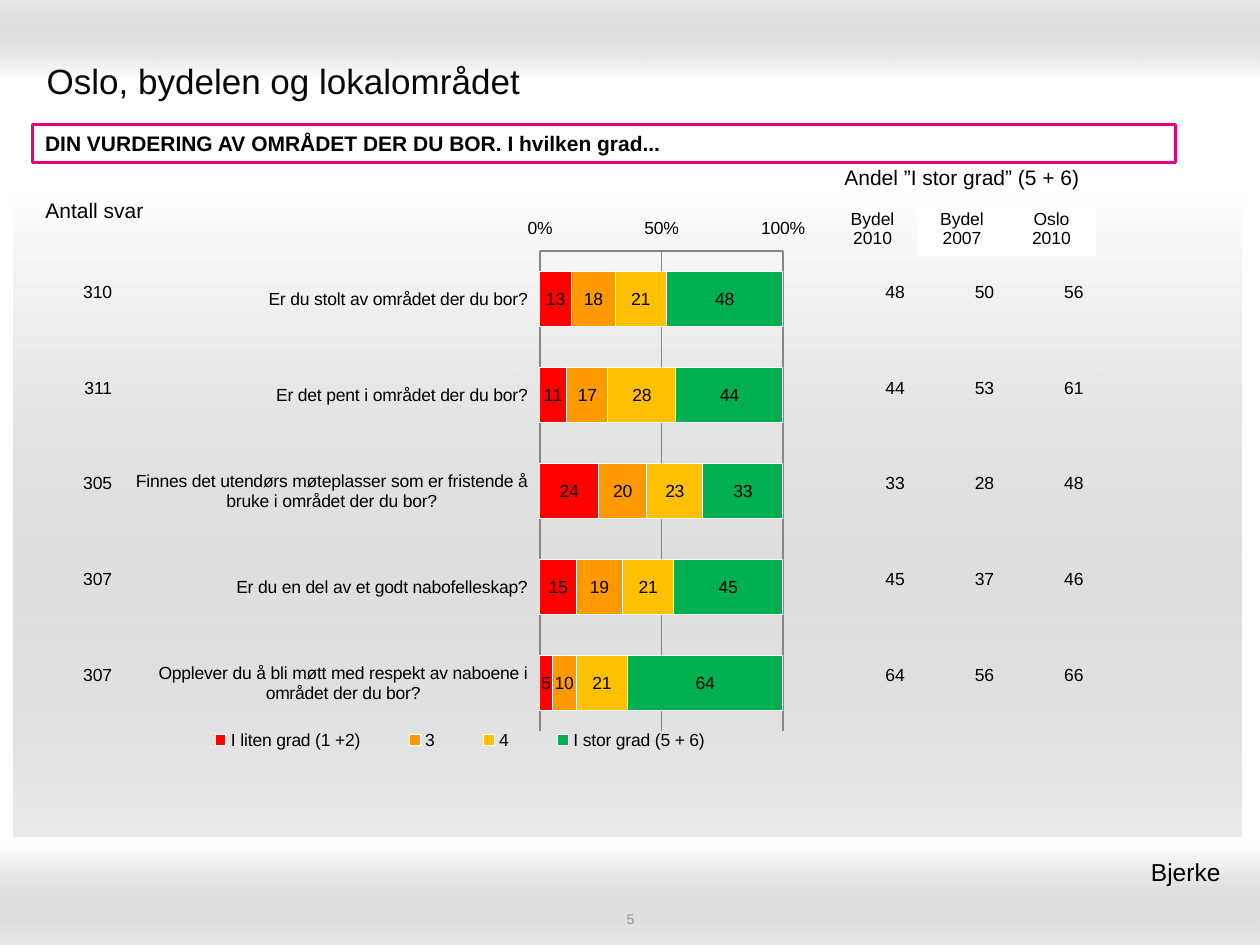
from dataclasses import dataclass

from lxml import etree
from pptx import Presentation
from pptx import util as u
from pptx.chart import data
from pptx.dml import color
from pptx.enum import chart, shapes, text
from pptx.oxml import ns

LEFT, MID, RIGHT = text.PP_ALIGN.LEFT, text.PP_ALIGN.CENTER, text.PP_ALIGN.RIGHT
PLAIN = "{2D5ABB26-0587-4C30-8999-92F81FD0307C}"


@dataclass(frozen=True)
class Theme:
    font: str = "Arial"
    white: str = "FFFFFF"
    black: str = "000000"
    ink: str = "080808"
    shade: str = "999999"
    pale: str = "969696"
    grid: str = "868686"
    pink: str = "E7007E"
    scale: tuple = ("FF0000", "FF9900", "FFC000", "00B050")
    title: int = 20
    place: int = 14
    head: int = 12
    base: int = 10
    foot: int = 8


def rgb(tone):
    return color.RGBColor.from_string(tone)


def write(frame, words, size, tone=Theme.black, bold=False, align=LEFT):
    frame.word_wrap = True
    frame.vertical_anchor = text.MSO_ANCHOR.MIDDLE
    for at, line in enumerate(words.split("\n")):
        para = frame.paragraphs[0] if at == 0 else frame.add_paragraph()
        para.alignment = align
        run = para.add_run()
        run.text = line
        font = run.font
        font.name, font.size, font.bold = Theme.font, u.Pt(size), bold
        font.color.rgb = rgb(tone)


def frac(parent, x, y, w, h, inner=False):
    old = parent.find(ns.qn("c:layout"))
    if old is not None:
        parent.remove(old)
    layout = etree.Element(ns.qn("c:layout"))
    manual = etree.SubElement(layout, ns.qn("c:manualLayout"))
    marks = [("layoutTarget", "inner")] if inner else []
    marks += [("xMode", "edge"), ("yMode", "edge"), ("x", x), ("y", y), ("w", w), ("h", h)]
    for tag, val in marks:
        etree.SubElement(manual, ns.qn("c:" + tag)).set("val", str(val))
    return layout


class Page:
    def __init__(self, theme):
        self.theme = theme
        self.deck = Presentation()
        self.deck.slide_width, self.deck.slide_height = u.Inches(10), u.Inches(7.5)
        self.slide = self.deck.slides.add_slide(self.deck.slide_layouts[5])
        self.shapes = self.slide.shapes

    def rect(self, *box):
        shape = self.shapes.add_shape(shapes.MSO_SHAPE.RECTANGLE, *map(u.Inches, box))
        shape.shadow.inherit = False
        return shape

    def fade(self, angle, *box):
        shape = self.rect(*box)
        shape.line.fill.background()
        shape.fill.gradient()
        shape.fill.gradient_angle = 360 - angle
        for stop, tone in zip(shape.fill.gradient_stops, (self.theme.white, self.theme.shade)):
            stop.color.rgb = rgb(tone)
        last = shape._element.spPr.findall(".//" + ns.qn("a:srgbClr"))[1]
        etree.SubElement(last, ns.qn("a:alpha")).set("val", "20000")

    def title(self, words, *box):
        shape = self.shapes.title
        shape.left, shape.top, shape.width, shape.height = map(u.Inches, box)
        write(shape.text_frame, words, self.theme.title, self.theme.ink)
        tree = shape._element.getparent()
        tree.append(shape._element)

    def frame(self, words, *box):
        shape = self.rect(*box)
        shape.fill.solid()
        shape.fill.fore_color.rgb = rgb(self.theme.white)
        shape.line.color.rgb = rgb(self.theme.pink)
        shape.line.width = u.Pt(2)
        write(shape.text_frame, words, self.theme.head, bold=True)

    def label(self, words, *box, **style):
        shape = self.shapes.add_textbox(*map(u.Inches, box))
        write(shape.text_frame, words, **style)

    def table(self, rows, left, top, width, highs, sizes, align=MID):
        count = len(rows[0])
        grid = self.shapes.add_table(len(rows), count, *map(u.Inches, (left, top, width, sum(highs)))).table
        grid.first_row = grid.horz_banding = False
        grid._tbl.tblPr.find(ns.qn("a:tableStyleId")).text = PLAIN
        for col in grid.columns:
            col.width = u.Inches(width / count)
        for r, row in enumerate(rows):
            grid.rows[r].height = u.Inches(highs[r])
            for c, words in enumerate(row):
                cell = grid.cell(r, c)
                cell.fill.background()
                if words:
                    write(cell.text_frame, words, sizes[r], align=align)
                    cell.vertical_anchor = text.MSO_ANCHOR.MIDDLE
        return grid

    def bars(self, names, series, *box):
        theme = self.theme
        source = data.CategoryChartData(number_format="0")
        source.categories = names
        for name, vals in series.items():
            source.add_series(name, vals)
        plot = self.shapes.add_chart(
            chart.XL_CHART_TYPE.BAR_STACKED, *map(u.Inches, box), source).chart
        plot.has_title = False
        plot.font.name, plot.font.size = theme.font, u.Pt(theme.base)
        plot.font.color.rgb = rgb(theme.black)
        body = plot.plots[0]
        body.gap_width, body.overlap, body.vary_by_categories = 75, 100, False
        for item, tone in zip(body.series, theme.scale):
            item.format.fill.solid()
            item.format.fill.fore_color.rgb = rgb(tone)
            item.format.line.color.rgb = rgb(theme.white)
            tags = item.data_labels
            tags.show_value = True
            tags.number_format, tags.number_format_is_linked = "0", False
        cats, vals = plot.category_axis, plot.value_axis
        cats.reverse_order = True
        cats.major_tick_mark = chart.XL_TICK_MARK.NONE
        vals.major_tick_mark = chart.XL_TICK_MARK.INSIDE
        vals.minimum_scale, vals.maximum_scale, vals.major_unit = 0, 100, 50
        vals.has_major_gridlines = True
        vals.tick_labels.number_format = r"General\%"
        vals.tick_labels.number_format_is_linked = False
        for axis in (cats, vals):
            axis.tick_label_position = chart.XL_TICK_LABEL_POSITION.LOW
        for line in (cats.format.line, vals.format.line, vals.major_gridlines.format.line):
            line.color.rgb = rgb(theme.grid)
            line.width = u.Pt(0.75)
        plot.has_legend = True
        key = plot.legend
        key.position, key.include_in_layout = chart.XL_LEGEND_POSITION.BOTTOM, False
        area = plot._chartSpace.chart.plotArea
        area.insert(0, frac(area, 0.6, 0.08, 0.35, 0.84, inner=True))
        spot = frac(key._element, 0.07, 0.91, 0.83, 0.05)
        key._element.find(ns.qn("c:legendPos")).addnext(spot)


def main():
    theme = Theme()
    page = Page(theme)
    page.fade(270, 0, 0, 10, 0.62)
    page.fade(90, 0, 6.72, 10, 0.78)
    page.fade(90, 0.11, 1.56, 9.74, 5.08)
    page.title("Oslo, bydelen og lokalområdet", 0.27, 0.36, 9.45, 0.55)
    page.label("5", 3.42, 7.22, 3.17, 0.14, size=theme.foot, tone=theme.pale, align=MID)
    page.frame("DIN VURDERING AV OMRÅDET DER DU BOR. I hvilken grad...", 0.26, 0.99, 9.07, 0.3)
    names = [
        "Er du stolt av området der du bor?",
        "Er det pent i området der du bor?",
        "Finnes det utendørs møteplasser som er fristende å bruke i området der du bor?",
        "Er du en del av et godt nabofelleskap?",
        "Opplever du å bli møtt med respekt av naboene i området der du bor?",
    ]
    series = {
        "I liten grad (1 +2)": (13, 11, 24, 15, 5),
        "3": (18, 17, 20, 19, 10),
        "4": (21, 28, 23, 21, 21),
        "I stor grad (5 + 6)": (48, 44, 33, 45, 64),
    }
    page.bars(names, series, 0.98, 1.63, 5.51, 4.54)
    highs, sizes = [0.76] * 5, [theme.base] * 5
    shares = [("48", "50", "56"), ("44", "53", "61"), ("33", "28", "48"),
              ("45", "37", "46"), ("64", "56", "66")]
    page.table(shares, 6.57, 1.94, 2.13, highs, sizes, RIGHT)
    heads = [("Andel ”I stor grad” (5 + 6)", "", ""),
             ("Bydel\n2010", "Bydel\n2007", "Oslo\n2010")]
    top = page.table(heads, 6.57, 1.23, 2.13, [0.37, 0.43], [theme.head, theme.base])
    top.cell(0, 0).merge(top.cell(0, 2))
    for col in (1, 2):
        fill = top.cell(1, col).fill
        fill.solid()
        fill.fore_color.rgb = rgb(theme.white)
    page.table([("Antall svar",)], 0.04, 1.38, 1.42, [0.59], [theme.head])
    page.label("Bjerke ", 6.1, 6.75, 3.74, 0.34, size=theme.place, align=RIGHT)
    counts = [(count,) for count in ("310", "311", "305", "307", "307")]
    page.table(counts, 0.28, 1.94, 0.71, highs, sizes, RIGHT)
    page.deck.save("out.pptx")


if __name__ == "__main__":
    main()
